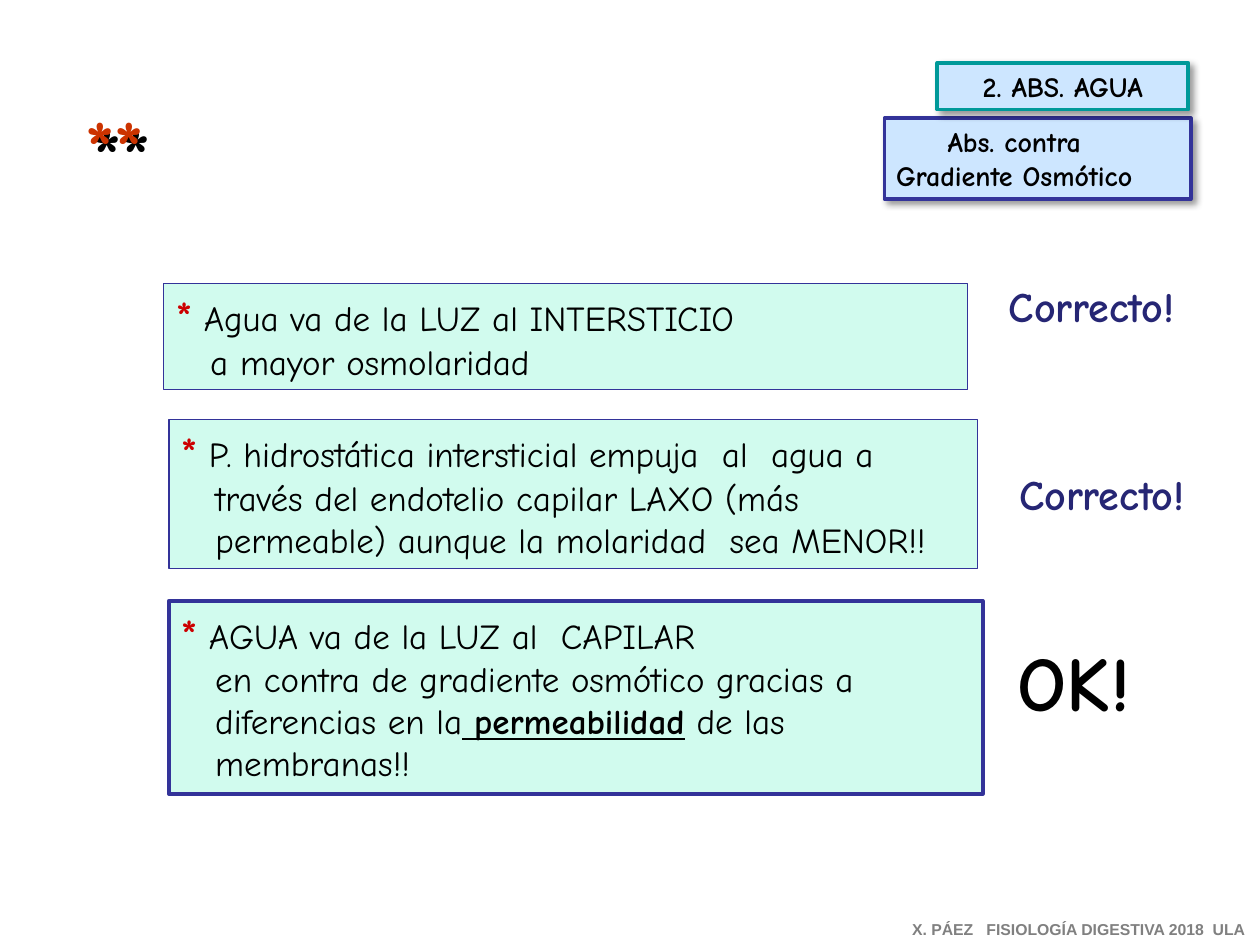
from dataclasses import dataclass

from lxml import etree
from pptx import Presentation
from pptx.dml.color import RGBColor
from pptx.enum import shapes, text
from pptx.oxml import ns
from pptx.util import Inches, Pt


@dataclass(frozen=True)
class Theme:
    font: str = "Comic Neue"
    footer_font: str = "Arial"
    black: str = "000000"
    star: str = "CC0000"
    marker: str = "CC3300"
    verdict: str = "262674"
    footer: str = "808080"
    mint: str = "D1FBEE"
    sky: str = "CDE6FF"
    navy: str = "333399"
    teal: str = "009999"
    huge: int = 44
    large: int = 24
    body: int = 20
    tag: int = 16
    small: int = 9


THEME = Theme()


def add_run(paragraph, words, size, color, bold=False, underline=None, font=THEME.font):
    run = paragraph.add_run()
    run.text = words
    run.font.name = font
    run.font.size = Pt(size)
    run.font.bold = bold
    run.font.underline = underline
    run.font.color.rgb = RGBColor.from_string(color)


def add_shadow(shape, blur, distance, angle, opacity):
    """Cast a black outer shadow; blur and distance in points, opacity in percent."""
    shape.shadow.inherit = False
    effects = shape._element.spPr.find(ns.qn("a:effectLst"))
    shadow = etree.SubElement(
        effects, ns.qn("a:outerShdw"), blurRad=str(Pt(blur)), dist=str(Pt(distance)),
        dir=str(angle * 60000), algn="tl", rotWithShape="0")
    color = etree.SubElement(shadow, ns.qn("a:srgbClr"), val=THEME.black)
    etree.SubElement(color, ns.qn("a:alpha"), val=str(opacity * 1000))


def add_box(slide, place, fill, line, line_width):
    box = slide.shapes.add_shape(shapes.MSO_SHAPE.RECTANGLE, *map(Inches, place))
    box.shadow.inherit = False
    box.fill.solid()
    box.fill.fore_color.rgb = RGBColor.from_string(fill)
    box.line.color.rgb = RGBColor.from_string(line)
    box.line.width = Pt(line_width)
    box.text_frame.word_wrap = True
    box.text_frame.vertical_anchor = text.MSO_ANCHOR.TOP
    return box


def next_paragraph(frame, index):
    return frame.add_paragraph() if index else frame.paragraphs[0]


def add_statement(slide, place, line_width, lines):
    """Add a starred statement; each line is a list of (words, style) parts."""
    frame = add_box(slide, place, THEME.mint, THEME.navy, line_width).text_frame
    for index, parts in enumerate(lines):
        paragraph = next_paragraph(frame, index)
        paragraph.alignment = text.PP_ALIGN.LEFT
        if index:
            paragraph._p.get_or_add_pPr().set("marL", str(Inches(0.27)))
        else:
            add_run(paragraph, "*", THEME.large, THEME.star, bold=True)
        for words, style in parts:
            add_run(paragraph, words, THEME.body, THEME.black, **style)


def add_tag(slide, place, line, lines):
    box = add_box(slide, place, THEME.sky, line, 2.25)
    add_shadow(box, blur=4, distance=3, angle=45, opacity=40)
    for index, words in enumerate(lines):
        paragraph = next_paragraph(box.text_frame, index)
        paragraph.alignment = text.PP_ALIGN.CENTER
        add_run(paragraph, words, THEME.tag, THEME.black, bold=True)
    return box


def add_label(slide, place, words, size, color, font=THEME.font):
    label = slide.shapes.add_textbox(*map(Inches, place))
    label.text_frame.word_wrap = False
    label.text_frame.auto_size = text.MSO_AUTO_SIZE.SHAPE_TO_FIT_TEXT
    add_run(label.text_frame.paragraphs[0], words, size, color, bold=True, font=font)
    return label


def main():
    presentation = Presentation()
    presentation.slide_width, presentation.slide_height = Inches(10), Inches(7.5)
    slide = presentation.slides.add_slide(presentation.slide_layouts[6])

    add_statement(slide, (1.3, 2.25, 6.38, 0.84), 0.75, [
        [(" Agua va de la LUZ al INTERSTICIO", {})],
        [("a mayor osmolaridad", {})],
    ])
    add_statement(slide, (1.34, 3.33, 6.42, 1.18), 0.75, [
        [(" P. hidrostática intersticial empuja  al  agua a", {})],
        [("través del endotelio capilar LAXO (más", {})],
        [("permeable) aunque la molaridad  sea MENOR!!", {})],
    ])
    add_statement(slide, (1.34, 4.77, 6.46, 1.53), 2.25, [
        [(" AGUA va de la LUZ al  CAPILAR", {})],
        [("en contra de gradiente osmótico gracias a", {})],
        [("diferencias en la", {}), (" ", {"underline": True}),
         ("permeabilidad", {"bold": True, "underline": True}), (" de las", {})],
        [("membranas!!", {})],
    ])

    for left, top in ((7.91, 2.18), (7.99, 3.67)):
        add_label(slide, (left, top, 1.67, 0.5), "Correcto!", THEME.large, THEME.verdict)
    add_label(slide, (7.98, 4.99, 1.21, 0.83), "OK!", THEME.huge, THEME.black)
    marker = add_label(slide, (0.58, 0.73, 0.85, 0.83), "**", THEME.huge, THEME.marker)
    add_shadow(marker, blur=0, distance=6.5, angle=50, opacity=100)

    topic = add_tag(slide, (7.02, 0.94, 2.43, 0.64), THEME.navy,
                    ["Abs. contra", "Gradiente Osmótico"])
    topic.text_frame.margin_left = Inches(0.05)
    topic.text_frame.margin_right = Inches(0.42)
    add_tag(slide, (7.44, 0.5, 1.99, 0.37), THEME.teal, ["2. ABS. AGUA"])
    add_label(slide, (7.14, 7.25, 2.86, 0.25), "X. PÁEZ   FISIOLOGÍA DIGESTIVA 2018  ULA",
              THEME.small, THEME.footer, THEME.footer_font)

    presentation.save("out.pptx")


if __name__ == "__main__":
    main()
